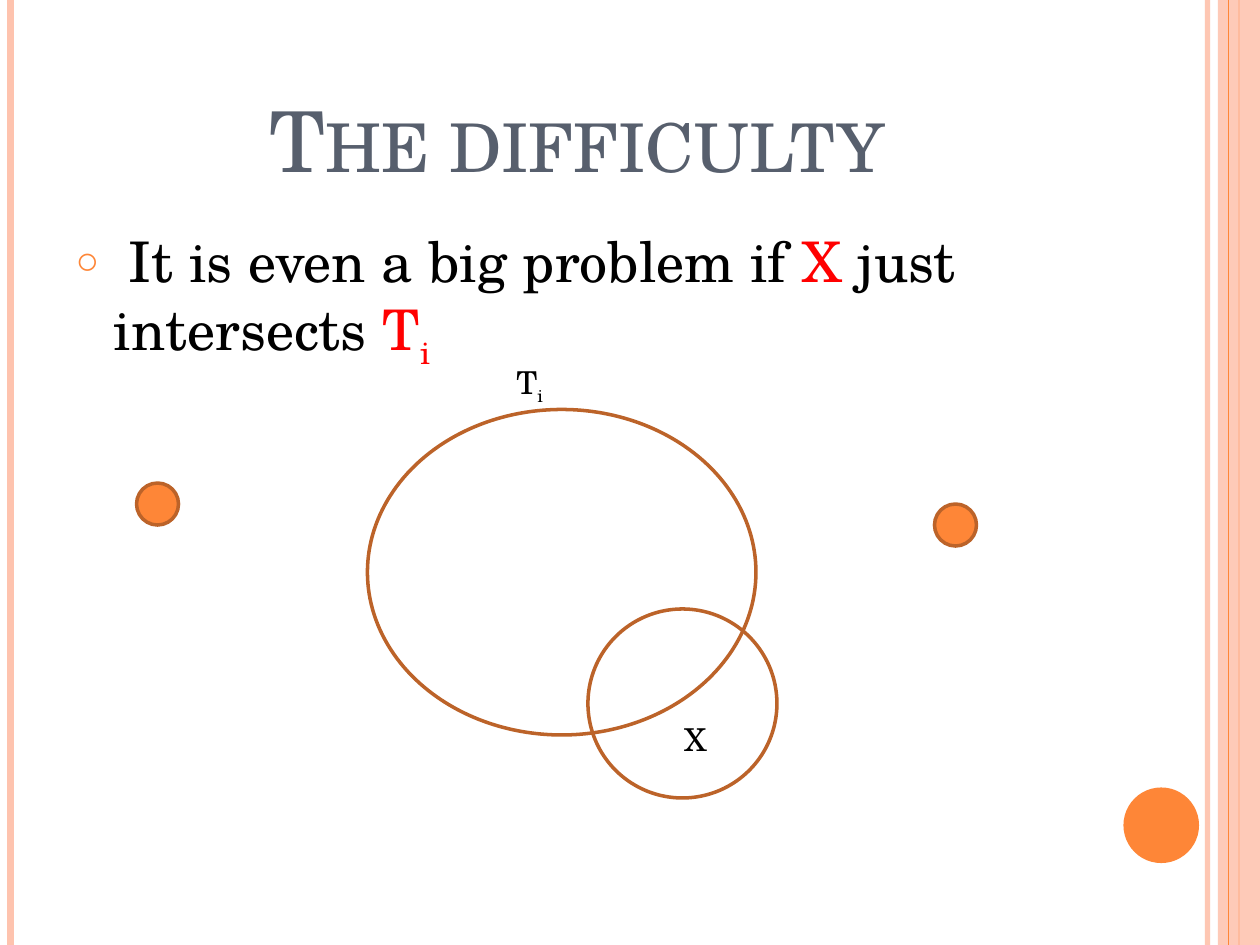
from lxml import etree
from pptx import Presentation
from pptx import util as u
from pptx.dml.color import RGBColor
from pptx.enum import shapes, text
from pptx.oxml import parse_xml
from pptx.oxml.ns import nsdecls, qn

ORANGE = RGBColor(0xFE, 0x86, 0x37)
PEACH = RGBColor(0xFE, 0xC3, 0xAE)
BROWN = RGBColor(0xBC, 0x63, 0x29)
SLATE = RGBColor(0x57, 0x5F, 0x6D)
RED = RGBColor(0xFF, 0, 0)
BLACK = RGBColor(0, 0, 0)
FONT = "TeX Gyre Schola"

prs = Presentation()
prs.slide_width, prs.slide_height = u.Inches(10), u.Inches(7.5)
COL, ROW = prs.slide_width / 120, prs.slide_height / 90
s = prs.slides.add_slide(prs.slide_layouts[1])


def grid(left, top, width, height):
    return [round(n * unit) for n, unit in
            zip((left, top, width, height), (COL, ROW, COL, ROW))]


def add_runs(p, size, parts):
    for wording, color, is_subscript in parts:
        r = p.add_run()
        r.text = wording
        r.font.name, r.font.size = FONT, u.Pt(size)
        r.font.color.rgb = color
        if is_subscript:
            r.font._element.set("baseline", "-25000")


for kind, x, color, width, alpha in (
    ("line", 115, PEACH, 3, 93),
    ("line", 1, PEACH, 4.5, 100),
    ("line", 118, ORANGE, 1.5, 100),
    ("band", 116, PEACH, 4, 87),
    ("line", 117, ORANGE, 0.75, 100),
):
    if kind == "line":
        x = round(x * COL)
        sp = s.shapes.add_connector(shapes.MSO_CONNECTOR.STRAIGHT, x, 0, x, prs.slide_height)
        sp.line.color.rgb, sp.line.width = color, u.Pt(width)
        etree.SubElement(sp._element.spPr, qn("a:effectLst"))
    else:
        sp = s.shapes.add_shape(shapes.MSO_SHAPE.RECTANGLE, *grid(x, 0, width, 90))
        sp.shadow.inherit = False
        sp.fill.solid()
        sp.fill.fore_color.rgb = color
        sp.line.fill.background()
    if alpha < 100:
        rgb = next(sp._element.spPr.iter(qn("a:srgbClr")))
        etree.SubElement(rgb, qn("a:alpha"), val=str(alpha * 1000))

for box, fill, line in (
    ((107, 75, 7.2, 7.2), ORANGE, None),
    ((13, 46, 4, 4), ORANGE, BROWN),
    ((35, 39, 37, 31), None, BROWN),
    ((56, 58, 18, 18), None, BROWN),
    ((89, 48, 4, 4), ORANGE, BROWN),
):
    sp = s.shapes.add_shape(shapes.MSO_SHAPE.OVAL, *grid(*box))
    sp.shadow.inherit = False
    if fill:
        sp.fill.solid()
        sp.fill.fore_color.rgb = fill
    else:
        sp.fill.background()
    if line:
        sp.line.color.rgb, sp.line.width = line, u.Pt(2)
    else:
        sp.line.fill.background()

title, body = s.shapes.title, s.placeholders[1]
for sp, box, anchor in (
    (title, (6, 3.6, 98, 15), text.MSO_ANCHOR.BOTTOM),
    (body, (6, 21, 98, 64), text.MSO_ANCHOR.TOP),
):
    sp.left, sp.top, sp.width, sp.height = grid(*box)
    sp.text_frame.auto_size = text.MSO_AUTO_SIZE.NONE
    sp.text_frame.vertical_anchor = anchor

p = title.text_frame.paragraphs[0]
p.alignment = text.PP_ALIGN.CENTER
add_runs(p, 48, [("The difficulty", SLATE, False)])
p.runs[0].font._element.set("cap", "small")

p = body.text_frame.paragraphs[0]
p.space_before = u.Pt(6)
add_runs(p, 32, [
    (" It is even a big problem if ", BLACK, False),
    ("X ", RED, False),
    ("just intersects ", BLACK, False),
    ("T", RED, False),
    ("i", RED, True),
])
pPr = p._p.get_or_add_pPr()
pPr.set("marL", str(u.Inches(0.3)))
pPr.set("indent", str(u.Inches(-0.3)))
for bullet in (
    f'<a:buClr {nsdecls("a")}><a:srgbClr val="{ORANGE}"/></a:buClr>',
    f'<a:buSzPct {nsdecls("a")} val="70000"/>',
    f'<a:buChar {nsdecls("a")} char="○"/>',
):
    pPr.append(parse_xml(bullet))

for box, parts in (
    ((64, 68, 23, 4.8), [("X", BLACK, False)]),
    ((48, 34, 37, 4.8), [("T", BLACK, False), ("i", BLACK, True)]),
):
    tf = s.shapes.add_textbox(*grid(*box)).text_frame
    tf.word_wrap = True
    tf.auto_size = text.MSO_AUTO_SIZE.SHAPE_TO_FIT_TEXT
    add_runs(tf.paragraphs[0], 18, parts)

prs.save("out.pptx")
